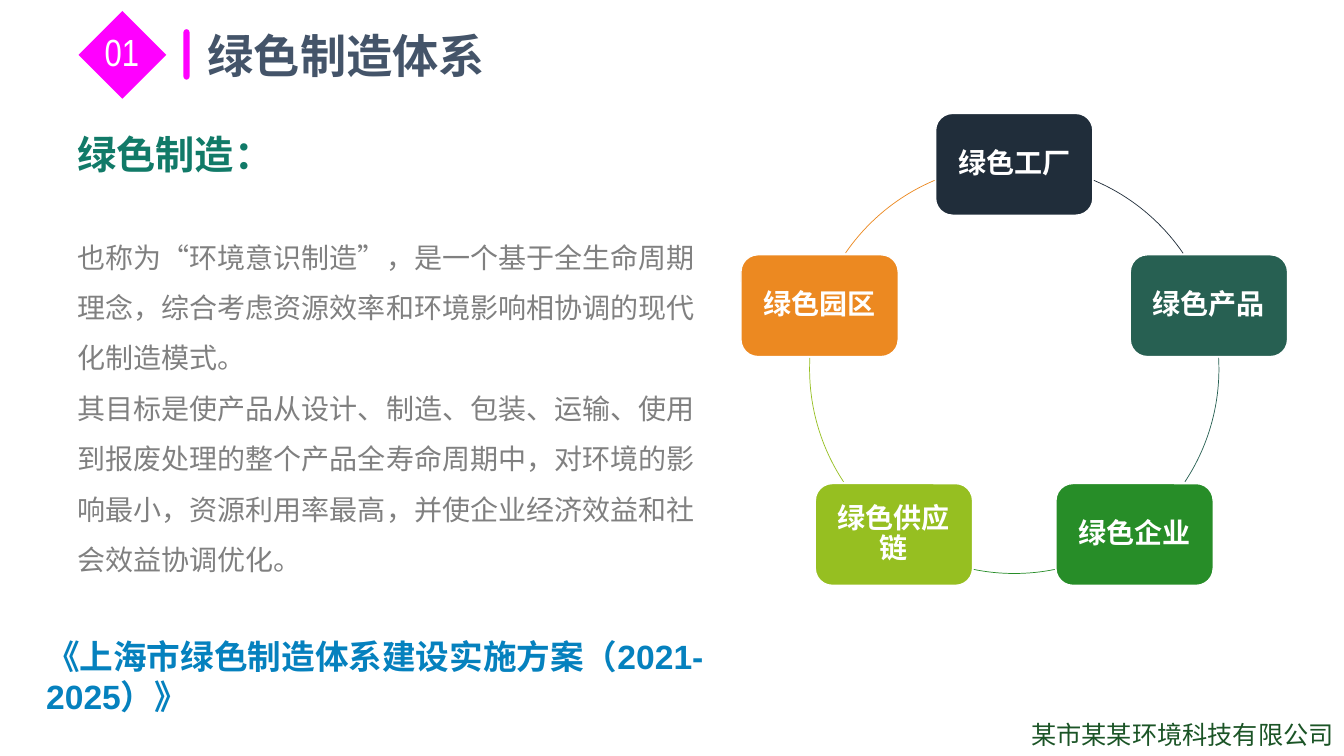
import math
from dataclasses import dataclass

from lxml import etree
from pptx import Presentation
from pptx.dml.color import RGBColor
from pptx.enum.lang import MSO_LANGUAGE_ID
from pptx.enum.shapes import MSO_SHAPE
from pptx.enum.text import MSO_ANCHOR, PP_ALIGN
from pptx.oxml.ns import qn
from pptx.util import Inches, Pt

CHINESE = MSO_LANGUAGE_ID.SIMPLIFIED_CHINESE
ROUND, DIAMOND, ARC = MSO_SHAPE.ROUNDED_RECTANGLE, MSO_SHAPE.DIAMOND, MSO_SHAPE.ARC
MIDDLE, CENTER = MSO_ANCHOR.MIDDLE, PP_ALIGN.CENTER


@dataclass(frozen=True)
class Theme:
    han: str = "Noto Sans CJK SC"
    sans: str = "Arial"
    thin: str = "Arial Narrow"
    node: str = "Montserrat"
    white: str = "FFFFFF"
    pink: str = "FF00FF"
    slate: str = "445469"
    teal: str = "117A68"
    gray: str = "808080"
    blue: str = "0581BE"
    forest: str = "1B5426"
    title: float = 33
    head: float = 28
    mark: float = 27
    plan: float = 24
    body: float = 20
    foot: float = 18


THEME = Theme()

NODES = [
    ("绿色工厂", "202D3A", (-67.1, -34.4)),
    ("绿色产品", "276052", (-3.1, 33.5)),
    ("绿色企业", "278D28", (78.6, 101.4)),
    ("绿色供应链", "96BF21", (146.5, 183.1)),
    ("绿色园区", "EC8921", (214.5, 247.1)),
]

BODY = [
    "也称为“环境意识制造”，是一个基于全生命周期理念，综合考虑资源效率和环境影响相协调的现代化制造模式。",
    "其目标是使产品从设计、制造、包装、运输、使用到报废处理的整个产品全寿命周期中，对环境的影响最小，资源利用率最高，并使企业经济效益和社会效益协调优化。",
]


def add_run(para, text, size, color, face, bold=False):
    run = para.add_run()
    run.text = text
    font = run.font
    font.size, font.bold, font.name = Pt(size), bold, face
    font.color.rgb = RGBColor.from_string(color)
    font.language_id = CHINESE
    props = run._r.get_or_add_rPr()
    east = etree.Element(qn("a:ea"), typeface=THEME.han)
    props.find(qn("a:latin")).addnext(east)


def add_frame(slide, left, top, width, height, wrap=True):
    box = slide.shapes.add_textbox(*map(Inches, (left, top, width, height)))
    box.text_frame.word_wrap = wrap
    return box.text_frame


def add_label(slide, place, text, size, color, face, bold=False, wrap=True):
    frame = add_frame(slide, *place, wrap)
    add_run(frame.paragraphs[0], text, size, color, face, bold)
    return frame


def add_solid(slide, kind, place, color):
    shape = slide.shapes.add_shape(kind, *map(Inches, place))
    shape.shadow.inherit = False
    shape.fill.solid()
    shape.fill.fore_color.rgb = RGBColor.from_string(color)
    shape.line.fill.background()
    return shape


def add_arc(slide, place, span, color):
    arc = slide.shapes.add_shape(ARC, *map(Inches, place))
    arc.shadow.inherit = False
    arc.fill.background()
    arc.line.color.rgb = RGBColor.from_string(color)
    arc.line.width = Pt(0.5)
    for spot, angle in enumerate(span):
        arc.adjustments[spot] = angle % 360 * 0.6


def add_node(slide, place, text, color):
    node = add_solid(slide, ROUND, place, color)
    node.line.color.rgb = RGBColor.from_string(THEME.white)
    node.line.width = Pt(1)
    frame = node.text_frame
    frame.word_wrap = True
    frame.vertical_anchor = MIDDLE
    frame.margin_left = frame.margin_right = Inches(0.08)
    frame.margin_top = frame.margin_bottom = Inches(0.08)
    para = frame.paragraphs[0]
    para.alignment, para.line_spacing = CENTER, 0.9
    add_run(para, text, THEME.body, THEME.white, THEME.node, True)


def add_cycle(slide, mid_x, mid_y, radius, width, height):
    ring = (mid_x - radius, mid_y - radius, 2 * radius, 2 * radius)
    step = 2 * math.pi / len(NODES)
    for index, (text, color, span) in enumerate(NODES):
        angle = index * step - math.pi / 2
        left = mid_x + radius * math.cos(angle) - width / 2
        top = mid_y + radius * math.sin(angle) - height / 2
        add_node(slide, (left, top, width, height), text, color)
        add_arc(slide, ring, span, color)


def add_header(slide):
    frame = add_label(slide, (1.94, 0.21, 10.49, 0.68), "绿色制造体系",
                      THEME.title, THEME.slate, THEME.sans, True)
    frame.margin_left = frame.margin_right = Inches(0.12)
    frame.margin_top = frame.margin_bottom = Inches(0.06)
    bar = add_solid(slide, ROUND, (1.82, 0.29, 0.06, 0.5), THEME.pink)
    bar.adjustments[0] = 0.5
    add_solid(slide, DIAMOND, (0.78, 0.11, 0.87, 0.87), THEME.pink)
    add_label(slide, (0.94, 0.24, 0.64, 0.56), "01",
              THEME.mark, THEME.white, THEME.thin)


def add_body(slide):
    frame = add_label(slide, (0.67, 1.24, 6.57, 4.52), "绿色制造：",
                      THEME.head, THEME.teal, THEME.sans, True)
    for index, text in enumerate(BODY):
        para = frame.add_paragraph()
        para.line_spacing = 1.5
        para.space_before = Pt(0 if index else 33)
        add_run(para, text, THEME.body, THEME.gray, THEME.han)


def main():
    deck = Presentation()
    deck.slide_width, deck.slide_height = Inches(13.33), Inches(7.5)
    slide = deck.slides.add_slide(deck.slide_layouts[6])
    add_label(slide, (10.13, 7.09, 3.2, 0.4), "某市某某环境科技有限公司",
              THEME.foot, THEME.forest, THEME.han, wrap=False)
    add_header(slide)
    add_body(slide)
    add_label(slide, (0.36, 6.26, 7.86, 0.5),
              "《上海市绿色制造体系建设实施方案（2021-2025）》",
              THEME.plan, THEME.blue, THEME.sans, True)
    add_cycle(slide, 10.06, 3.66, 2.03, 1.56, 1.01)
    deck.save("out.pptx")


if __name__ == "__main__":
    main()
